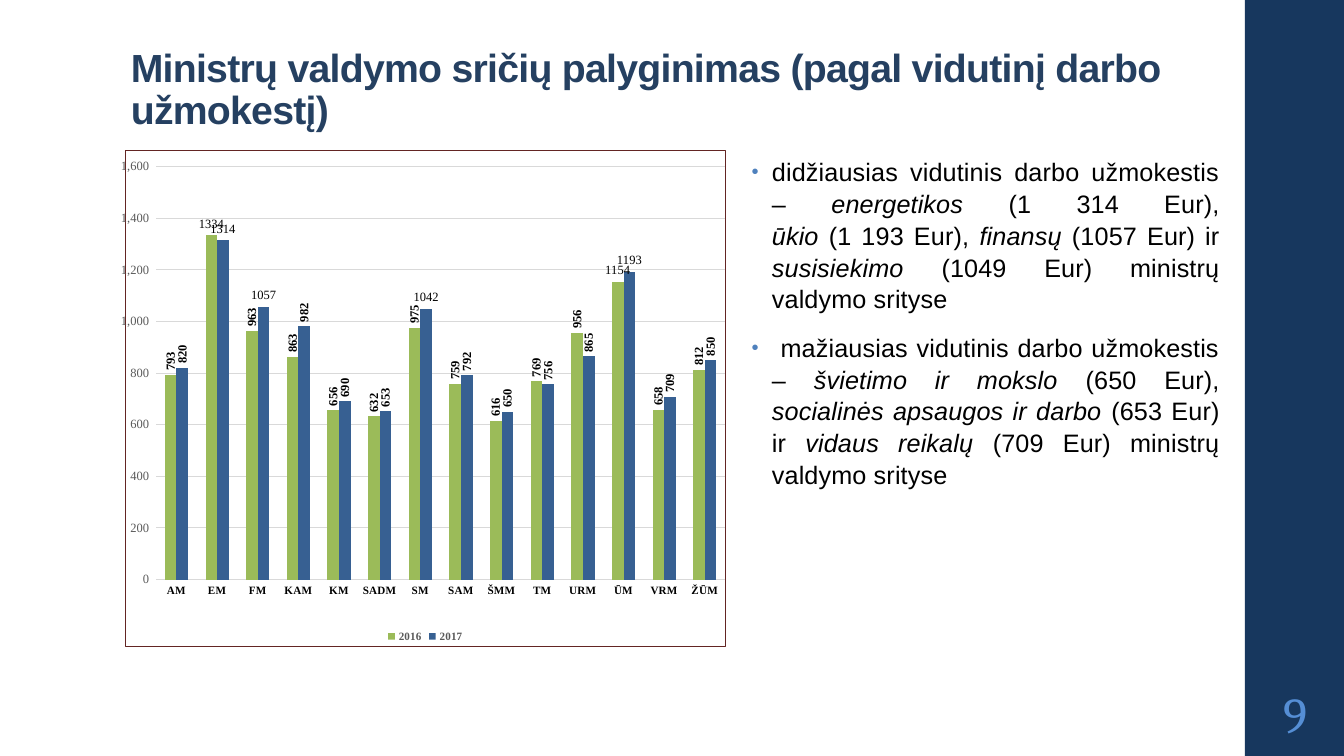
from dataclasses import dataclass

import lxml.etree
import pptx
import pptx.chart.data
import pptx.dml.color
import pptx.enum.chart
import pptx.enum.shapes
import pptx.enum.text
import pptx.oxml
import pptx.oxml.ns
import pptx.util

Pt = pptx.util.Pt
qn = pptx.oxml.ns.qn
ALIGN = pptx.enum.text.PP_ALIGN
ANCHOR = pptx.enum.text.MSO_ANCHOR


@dataclass(frozen=True)
class Theme:
    band: str = "17375E"
    title: str = "254061"
    number: str = "558ED5"
    bullet: str = "4F81BD"
    text: str = "000000"
    axis: str = "595959"
    grid: str = "D9D9D9"
    border: str = "632523"
    paper: str = "FFFFFF"
    y2016: str = "9BBB59"
    y2017: str = "376092"
    sans: str = "Arial"
    serif: str = "Cambria"
    chart: str = "Times New Roman"
    title_size: int = 28
    body_size: int = 18
    number_size: int = 36
    label_size: int = 9
    small_size: int = 8


theme = Theme()


def rgb(value):
    return pptx.dml.color.RGBColor.from_string(value)


def style(font, size, name, color, bold=False, italic=False):
    font.size, font.name, font.bold, font.italic = Pt(size), name, bold, italic
    font.color.rgb = rgb(color)


prs = pptx.Presentation()
prs.slide_width, prs.slide_height = Pt(960), Pt(540)
s = prs.slides.add_slide(prs.slide_layouts[6])

# Side band
band = s.shapes.add_shape(pptx.enum.shapes.MSO_SHAPE.RECTANGLE, Pt(889.2), 0, Pt(72), Pt(540))
band.shadow.inherit = False
band.fill.solid()
band.fill.fore_color.rgb = rgb(theme.band)
band.line.fill.background()

# Title
title = s.shapes.add_textbox(Pt(86.4), Pt(22.3), Pt(792), Pt(76.3))
tf = title.text_frame
tf.word_wrap = True
tf.vertical_anchor = ANCHOR.BOTTOM
p = tf.paragraphs[0]
p.text = "Ministrų valdymo sričių palyginimas (pagal vidutinį darbo užmokestį)"
p.line_spacing = 0.9
r = p.runs[0]
style(r.font, theme.title_size, theme.sans, theme.title, bold=True)
r.font._element.set("spc", "-50")

# Chart of average pay by ministry
data = pptx.chart.data.CategoryChartData(number_format="#,##0_ ;\\-#,##0\\ ")
data.categories = ["AM", "EM", "FM", "KAM", "KM", "SADM", "SM", "SAM", "ŠMM", "TM",
                   "URM", "ŪM", "VRM", "ŽŪM"]
data.add_series("2016", [793, 1334, 963, 863, 656, 632, 975, 759, 616, 769, 956, 1154, 658, 812])
data.add_series("2017", [820, 1314, 1057, 982, 690, 653, 1049, 792, 650, 756, 865, 1193, 709, 850])
frame = s.shapes.add_chart(pptx.enum.chart.XL_CHART_TYPE.COLUMN_CLUSTERED,
                           Pt(86.4), Pt(107.3), Pt(432), Pt(355), data)
chart = frame.chart
chart.has_title = False
style(chart.font, 10, theme.serif, theme.text)
chart.has_legend = True
chart.legend.position = pptx.enum.chart.XL_LEGEND_POSITION.BOTTOM
chart.legend.include_in_layout = False
style(chart.legend.font, theme.small_size, theme.chart, theme.axis, bold=True)

cat_axis, val_axis = chart.category_axis, chart.value_axis
for axis in (cat_axis, val_axis):
    axis.major_tick_mark = axis.minor_tick_mark = pptx.enum.chart.XL_TICK_MARK.NONE
    axis.format.line.fill.background()
style(cat_axis.tick_labels.font, theme.small_size, theme.chart, theme.text, bold=True)
style(val_axis.tick_labels.font, theme.label_size, theme.chart, theme.axis)
val_axis.minimum_scale, val_axis.maximum_scale, val_axis.major_unit = 0, 1600, 200
val_axis.major_gridlines.format.line.color.rgb = rgb(theme.grid)
val_axis.major_gridlines.format.line.width = Pt(0.75)

plot = chart.plots[0]
plot.gap_width, plot.overlap = 150, 0
plot.vary_by_categories = False
outside = pptx.enum.chart.XL_LABEL_POSITION.OUTSIDE_END
flat_labels = [{1: "1334", 11: "1154"}, {1: "1314", 2: "1057", 6: "1042", 11: "1193"}]
for series, color, flat in zip(plot.series, (theme.y2016, theme.y2017), flat_labels):
    series.format.fill.solid()
    series.format.fill.fore_color.rgb = rgb(color)
    labels = series.data_labels
    labels.show_value = True
    labels.position = outside
    style(labels.font, theme.label_size, theme.chart, theme.text, bold=True)
    body = labels._element.find(qn("c:txPr")).find(qn("a:bodyPr"))
    body.set("rot", "-5400000")
    body.set("vert", "horz")
    for i, text in flat.items():
        label = series.points[i].data_label
        tf = label.text_frame
        tf.text = text
        tf._txBody.find(qn("a:bodyPr")).set("rot", "0")
        style(tf.paragraphs[0].runs[0].font, theme.label_size, theme.chart, theme.text)
        label.position = outside

# Fixed plot area and frame around the chart
area = chart._chartSpace.chart.plotArea
for layout in area.findall(qn("c:layout")):
    area.remove(layout)
layout = lxml.etree.Element(qn("c:layout"))
manual = lxml.etree.SubElement(layout, qn("c:manualLayout"))
for tag, value in (("layoutTarget", "inner"), ("xMode", "edge"), ("yMode", "edge"),
                   ("x", "0.051"), ("y", "0.032"), ("w", "0.949"), ("h", "0.833")):
    lxml.etree.SubElement(manual, qn("c:" + tag)).set("val", value)
area.insert(0, layout)
chart._chartSpace.chart.addnext(pptx.oxml.parse_xml(
    f'<c:spPr {pptx.oxml.ns.nsdecls("c", "a")}>'
    f'<a:solidFill><a:srgbClr val="{theme.paper}"/></a:solidFill>'
    f'<a:ln w="{Pt(0.75)}"><a:solidFill><a:srgbClr val="{theme.border}"/></a:solidFill></a:ln>'
    '</c:spPr>'))

# Findings: pieces alternate between upright and italic; \v breaks the line
findings = [
    ["didžiausias vidutinis darbo užmokestis – ", "energetikos", " (1 314 Eur),\v", "ūkio",
     " (1 193 Eur), ", "finansų", " (1057 Eur) ir ", "susisiekimo",
     " (1049 Eur) ministrų valdymo srityse"],
    [" mažiausias vidutinis darbo užmokestis – ", "švietimo ir mokslo ", "(650 Eur), ",
     "socialinės apsaugos ir darbo ", "(653 Eur) ir ", "vidaus reikalų ",
     "(709 Eur) ministrų valdymo srityse"],
]
box = s.shapes.add_textbox(Pt(529.9), Pt(107.3), Pt(348.5), Pt(355))
tf = box.text_frame
tf.word_wrap = True
for n, pieces in enumerate(findings):
    p = tf.add_paragraph() if n else tf.paragraphs[0]
    p.alignment = ALIGN.JUSTIFY
    p.line_spacing = 1.05
    p.space_before = p.space_after = Pt(6)
    pPr = p._p.get_or_add_pPr()
    pPr.set("marL", str(Pt(14.4)))
    pPr.set("indent", str(-Pt(14.4)))
    color = lxml.etree.SubElement(pPr, qn("a:buClr"))
    lxml.etree.SubElement(color, qn("a:srgbClr")).set("val", theme.bullet)
    lxml.etree.SubElement(pPr, qn("a:buSzPct")).set("val", "80000")
    lxml.etree.SubElement(pPr, qn("a:buFont")).set("typeface", theme.sans)
    lxml.etree.SubElement(pPr, qn("a:buChar")).set("char", "•")
    for i, piece in enumerate(pieces):
        r = p.add_run()
        r.text = piece.rstrip("\v")
        style(r.font, theme.body_size, theme.sans, theme.text, italic=i % 2 == 1)
        r.font._element.set("spc", "10")
        if piece.endswith("\v"):
            p.add_line_break()

# Slide number
number = s.shapes.add_textbox(Pt(889.2), Pt(486), Pt(72), Pt(46.8))
tf = number.text_frame
tf.word_wrap = True
tf.vertical_anchor = ANCHOR.MIDDLE
tf.margin_left = tf.margin_right = tf.margin_top = tf.margin_bottom = Pt(3.6)
p = tf.paragraphs[0]
p.text = "9"
p.alignment = ALIGN.CENTER
style(p.runs[0].font, theme.number_size, theme.serif, theme.number)

prs.save("out.pptx")
